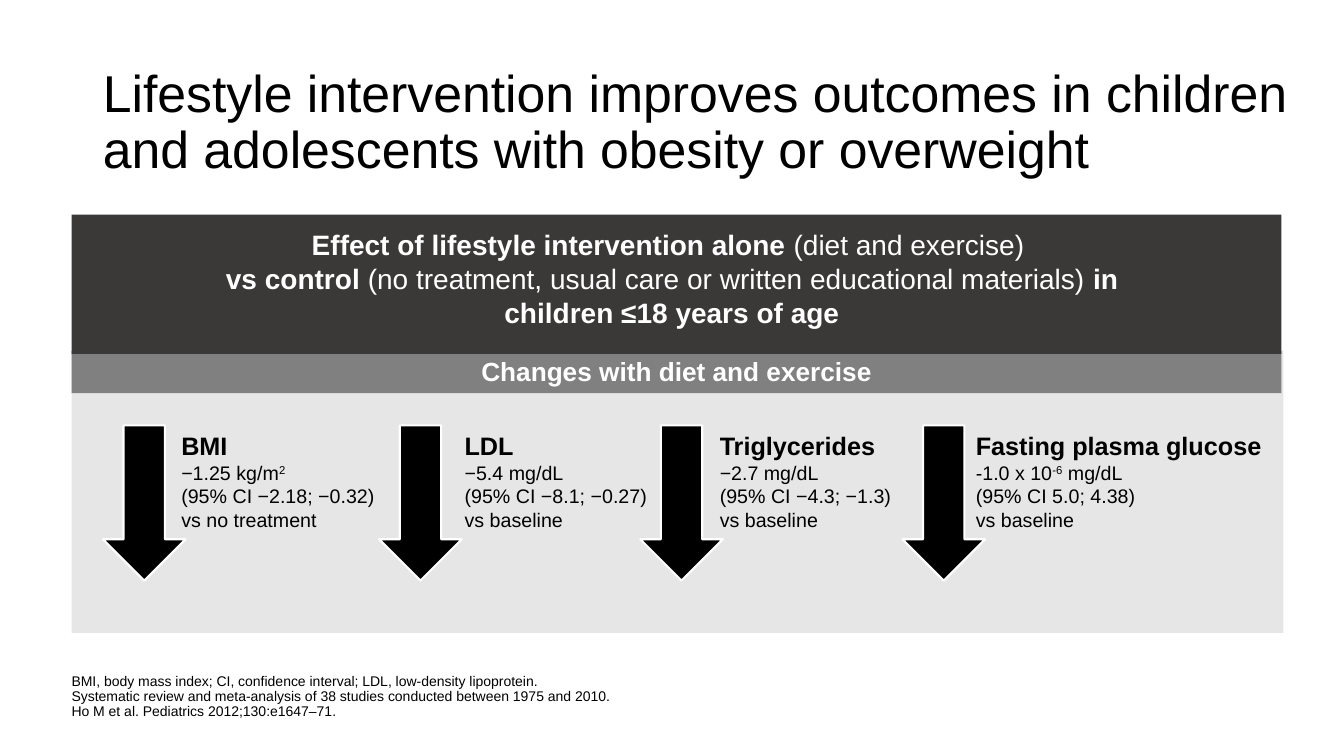
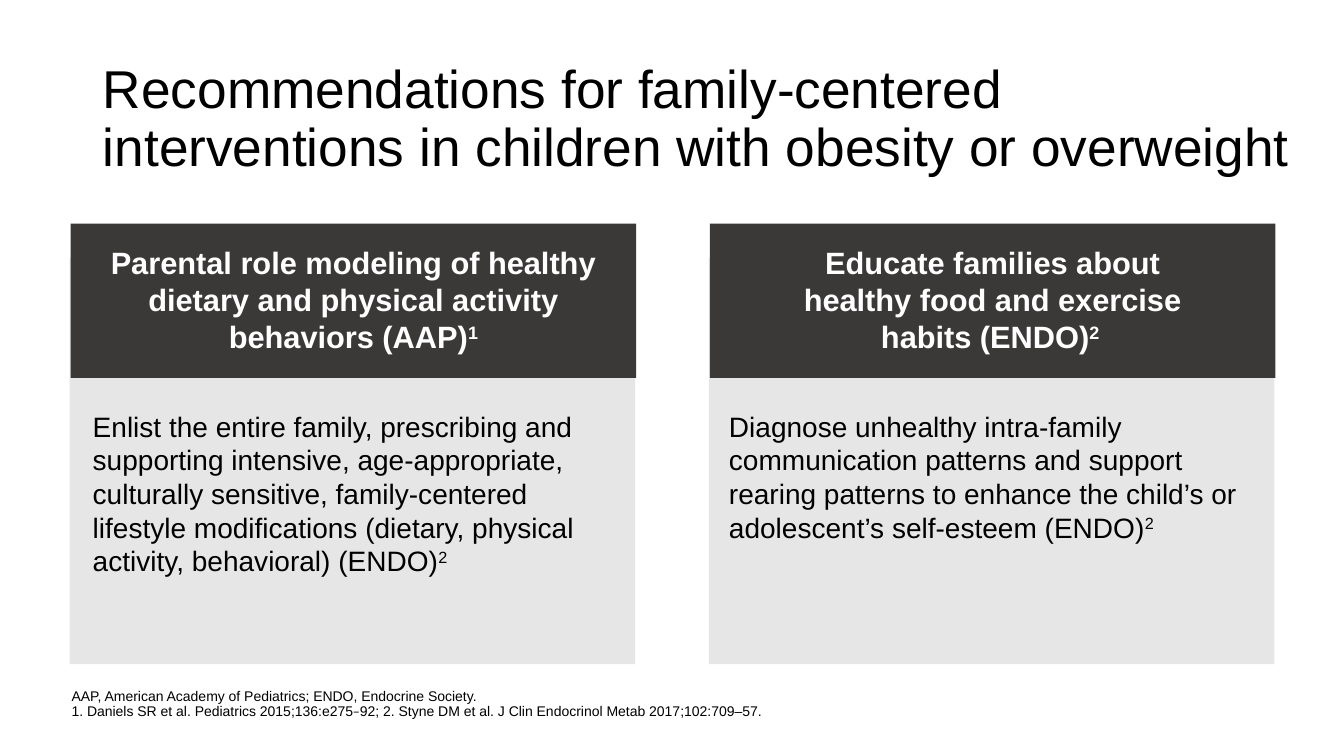
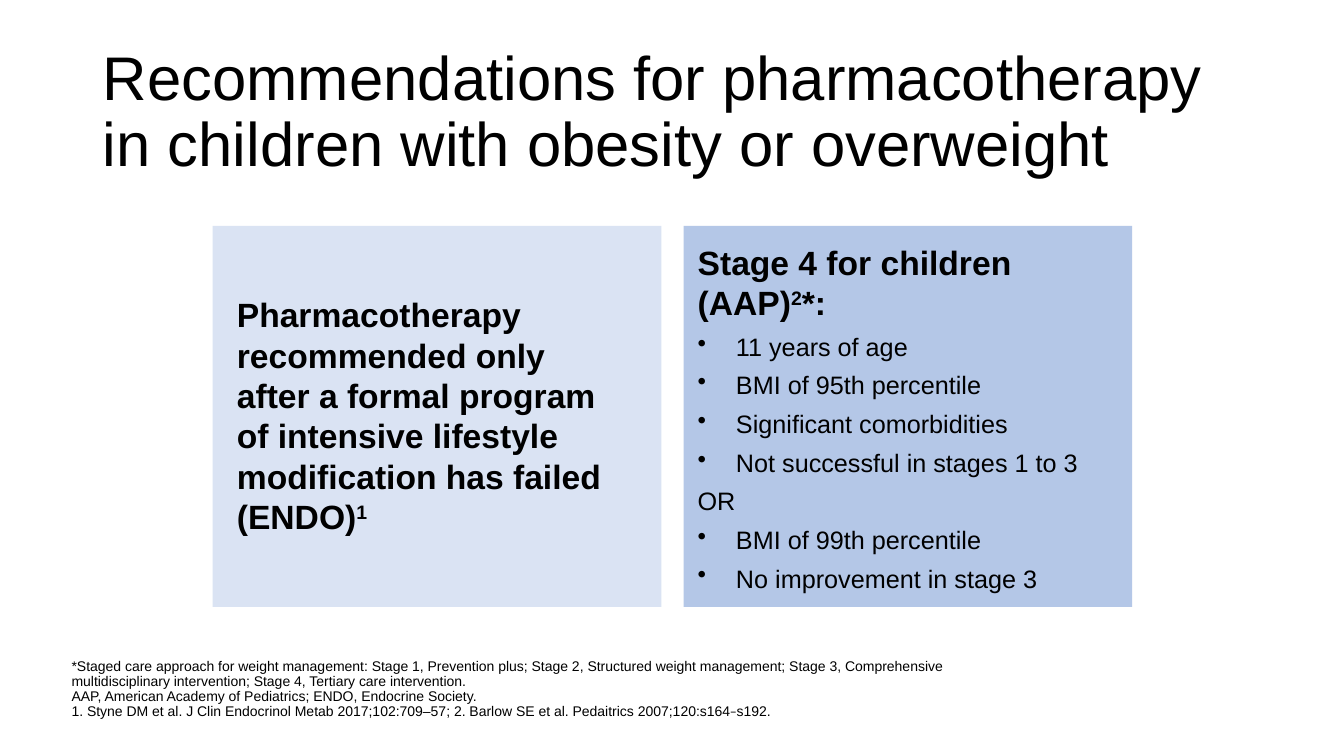
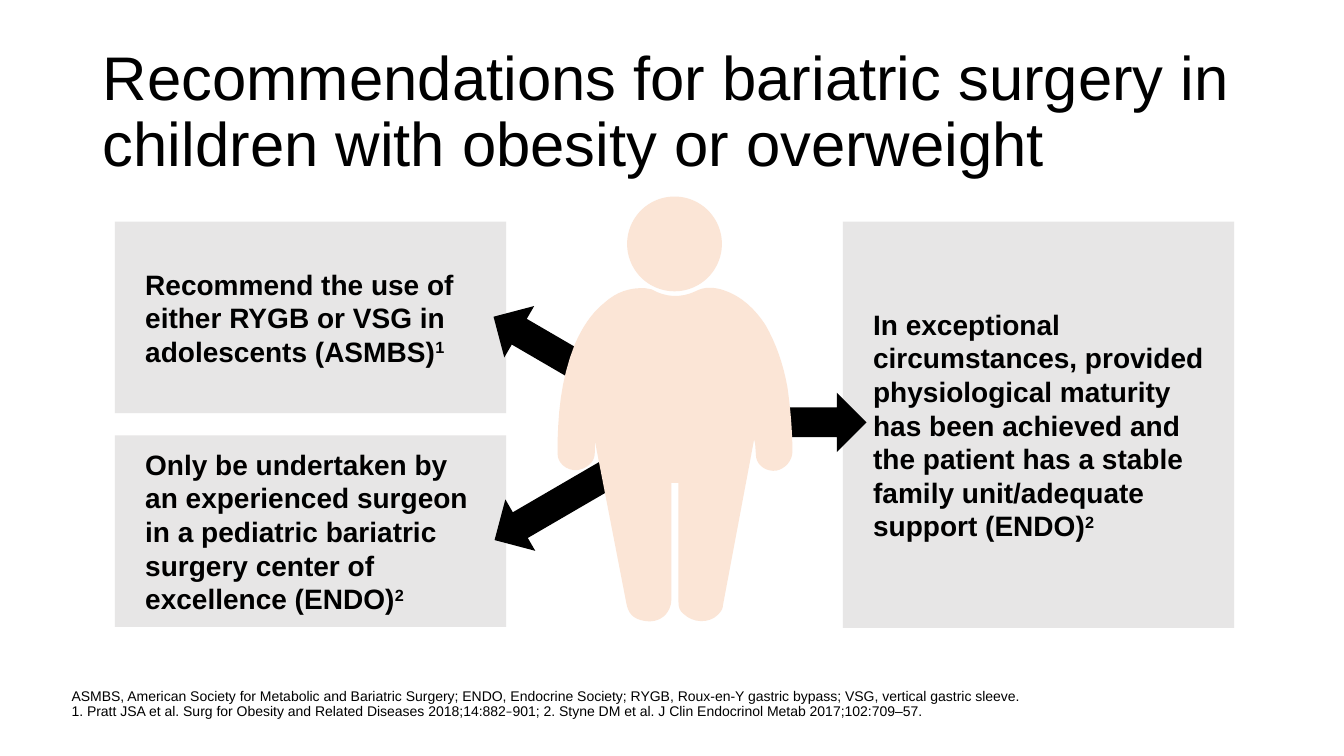
"""Build four slides on treating obesity in children."""
import pptx
import pptx.dml.color
import pptx.enum.shapes
import pptx.enum.text
import pptx.oxml.ns
import pptx.util
from lxml import etree

Inches = pptx.util.Inches
Pt = pptx.util.Pt
Kind = pptx.enum.shapes.MSO_SHAPE
Anchor = pptx.enum.text.MSO_ANCHOR
Align = pptx.enum.text.PP_ALIGN

BLACK, WHITE = "000000", "FFFFFF"
DARK, GREY, PALE = "3B3838", "808080", "E7E6E6"
ICE, BLUE, SKIN = "DAE3F3", "B4C7E7", "FBE5D6"
PAD = (0.1, 0.05, 0.1, 0.05)
NONE = (0, 0, 0, 0)
LAYOUT = {"alignment", "line_spacing", "space_before", "space_after"}
DASH = ("–", {"name": "Calibri"})
PLAIN = {"bold": False}


def shade(code):
    """Turn a hex string into a colour."""
    return pptx.dml.color.RGBColor.from_string(code)


def para(*runs, **style):
    """Pair the runs of a paragraph with its own style."""
    return runs, style


def up(text):
    """Make a raised run."""
    return text, {"raised": True}


def trace(start, parts):
    """Turn lines and cubic curves into a list of points."""
    spots = [start]
    for part in parts:
        if len(part) == 2:
            spots.append(part)
            continue
        x0, y0 = spots[-1]
        x1, y1, x2, y2, x3, y3 = part
        for step in range(1, 9):
            t = step / 8
            a, b, c, d = (1 - t) ** 3, 3 * t * (1 - t) ** 2, 3 * t * t * (1 - t), t ** 3
            spots.append((a * x0 + b * x1 + c * x2 + d * x3,
                          a * y0 + b * y1 + c * y2 + d * y3))
    return spots


class Deck:
    """Hold the style and the current slide."""

    def __init__(self):
        """Start an empty wide deck."""
        self.file = pptx.Presentation()
        self.file.slide_width = Inches(13.33)
        self.file.slide_height = Inches(7.5)
        self.slide = None

    def page(self, title, size, top, width, notes):
        """Add a slide with its title and footnotes."""
        self.slide = self.file.slides.add_slide(self.file.slide_layouts[5])
        head = self.slide.shapes.title
        box = {"left": 0.92, "top": top, "width": width, "height": 1.45}
        for name, value in box.items():
            setattr(head, name, Inches(value))
        self.put(head.text_frame, [para(title)], anchor=Anchor.MIDDLE,
                 size=size, line_spacing=0.9)
        self.text((0.71, 6.79, 9.46, 0.35), notes, anchor=Anchor.BOTTOM,
                  size=10, line_spacing=0.9)

    def put(self, frame, paras, pad=PAD, anchor=Anchor.TOP, **style):
        """Fill a text frame with paragraphs."""
        sides = ("left", "top", "right", "bottom")
        look = {"margin_" + side: Inches(gap) for side, gap in zip(sides, pad)}
        look.update(word_wrap=True, vertical_anchor=anchor,
                    auto_size=pptx.enum.text.MSO_AUTO_SIZE.NONE)
        for name, value in look.items():
            setattr(frame, name, value)
        base = {"name": "Arial", "color": BLACK, "alignment": Align.LEFT, **style}
        for spot, (runs, own) in enumerate(paras):
            line = frame.add_paragraph() if spot else frame.paragraphs[0]
            mix = {**base, **own}
            for name in LAYOUT & mix.keys():
                setattr(line, name, mix[name])
            if mix.get("bullet"):
                self.bullet(line)
            for run in runs:
                text, extra = (run, {}) if isinstance(run, str) else run
                self.run(line, text, {**mix, **extra})

    def run(self, line, text, style):
        """Add a run, with line breaks where the text has them."""
        for spot, piece in enumerate(text.split("\n")):
            if spot:
                line.add_line_break()
            run = line.add_run()
            run.text = piece
            font = {"name": style["name"], "size": Pt(style["size"]),
                    "bold": style.get("bold", False)}
            for name, value in font.items():
                setattr(run.font, name, value)
            run.font.color.rgb = shade(style["color"])
            if style.get("raised"):
                run._r.get_or_add_rPr().set("baseline", "30000")

    def bullet(self, line):
        """Give a paragraph a hanging bullet."""
        props = line._p.get_or_add_pPr()
        props.set("marL", str(Inches(0.38)))
        props.set("indent", str(-Inches(0.38)))
        mark = etree.SubElement(props, pptx.oxml.ns.qn("a:buChar"))
        mark.set("char", "•")

    def text(self, at, paras, pad=NONE, **style):
        """Add a text box."""
        box = self.slide.shapes.add_textbox(*map(Inches, at))
        self.put(box.text_frame, paras, pad, **style)

    def paint(self, shape, fill, edge=None):
        """Set the fill and outline of a shape."""
        shape.shadow.inherit = False
        shape.fill.solid()
        shape.fill.fore_color.rgb = shade(fill)
        if edge:
            shape.line.color.rgb = shade(edge)
            shape.line.width = Pt(1.5)
        else:
            shape.line.fill.background()

    def shape(self, at, fill, kind=Kind.RECTANGLE, edge=None, turn=0):
        """Add a preset shape."""
        item = self.slide.shapes.add_shape(kind, *map(Inches, at))
        item.rotation = turn
        self.paint(item, fill, edge)
        return item

    def panel(self, at, fill, paras, **style):
        """Add a rectangle that holds text."""
        self.put(self.shape(at, fill).text_frame, paras, **style)

    def free(self, spots, fill):
        """Add a closed outline."""
        spots = [(Inches(x), Inches(y)) for x, y in spots]
        form = self.slide.shapes.build_freeform(*spots[0])
        form.add_line_segments(spots[1:], close=True)
        self.paint(form.convert_to_shape(), fill)


def effects(deck):
    """Build the slide on lifestyle outcomes."""
    deck.page("Lifestyle intervention improves outcomes in children and adolescents "
              "with obesity or overweight", 37, 0.5, 12.25, [
                  para("BMI, body mass index; CI, confidence interval; "
                       "LDL, low-density lipoprotein."),
                  para("Systematic review and meta-analysis of 38 studies "
                       "conducted between 1975 and 2010."),
                  para("Ho M et al. Pediatrics 2012;130:e1647–71.")])
    deck.shape((0.71, 3.48, 12.02, 2.8), PALE)
    deck.panel((0.71, 3.48, 12, 0.42), GREY, [para("Changes with diet and exercise")],
               size=18.7, bold=True, color=WHITE, alignment=Align.CENTER)
    items = [
        (1.02, 1.7, 2.16, "BMI", ("−1.25 kg/m", up("2")),
         "(95% CI −2.18; −0.32)", "vs no treatment"),
        (3.76, 4.51, 2.11, "LDL", ("−5.4 mg/dL",), "(95% CI −8.1; −0.27)", "vs baseline"),
        (6.35, 7.04, 2.19, "Triglycerides", ("−2.7 mg/dL",),
         "(95% CI −4.3; −1.3)", "vs baseline"),
        (8.95, 9.58, 3.22, "Fasting plasma glucose", ("-1.0 x 10", up("-6"), " mg/dL"),
         "(95% CI 5.0; 4.38)", "vs baseline"),
    ]
    for x, left, width, name, drop, span, base in items:
        deck.shape((x, 4.22, 0.82, 1.54), BLACK, Kind.DOWN_ARROW, WHITE)
        deck.text((left, 4.22, width, 1.47),
                  [para(name, size=18, bold=True), para(*drop), para(span), para(base)],
                  pad=PAD, size=14)
    deck.shape((0.71, 2.13, 12, 1.38), DARK)
    deck.text((2.16, 2.26, 9.01, 1.09), [
        para("Effect of lifestyle intervention alone ", ("(diet and exercise) ", PLAIN)),
        para("vs control ",
             ("(no treatment, usual care or written educational materials) ", PLAIN),
             "in children ≤18 years of age")],
        size=20, bold=True, color=WHITE, alignment=Align.CENTER)


def family(deck):
    """Build the slide on family-centered care."""
    deck.page("Recommendations for family-centered interventions in children "
              "with obesity or overweight", 38, 0.47, 12.02, [
                  para("AAP, American Academy of Pediatrics; ENDO, Endocrine Society."),
                  para("1. Daniels SR et al. Pediatrics 2015;136:e275", DASH,
                       "92; 2. Styne DM et al. J Clin Endocrinol Metab 2017;102:709–57.")])
    cards = [
        (0.69, 0.92, 5.17,
         para("Parental role modeling of healthy dietary and physical activity "
              "behaviors (AAP)", up("1")),
         para("Enlist the entire family, prescribing and supporting intensive, "
              "age-appropriate, culturally sensitive, family-centered lifestyle "
              "modifications (dietary, physical activity, behavioral) (ENDO)", up("2"))),
        (7.03, 7.23, 5.21,
         para("Educate families about\nhealthy food and exercise\nhabits (ENDO)", up("2 ")),
         para("Diagnose unhealthy intra-family communication patterns and support "
              "rearing patterns to enhance the child’s or adolescent’s self-esteem "
              "(ENDO)", up("2"))),
    ]
    for x, left, width, head, body in cards:
        deck.shape((x, 2.56, 5.61, 4.03), PALE)
        deck.panel((x + 0.01, 2.22, 5.61, 1.53), DARK, [head], pad=(0.2, 0.2, 0.2, 0.05),
                   size=22, bold=True, color=WHITE, alignment=Align.CENTER)
        deck.text((left, 4.06, width, 1.68), [body], size=20)


def drugs(deck):
    """Build the slide on pharmacotherapy."""
    deck.page("Recommendations for pharmacotherapy in children with obesity or overweight",
              44, 0.4, 11.5, [
                  para("*Staged care approach for weight management: Stage 1, Prevention "
                       "plus; Stage 2, Structured weight management; Stage 3, Comprehensive "
                       "multidisciplinary intervention; Stage 4, Tertiary care intervention."),
                  para("AAP, American Academy of Pediatrics; ENDO, Endocrine Society."),
                  para("1. Styne DM et al. J Clin Endocrinol Metab 2017;102:709–57; "
                       "2. Barlow SE et al. Pedaitrics 2007;120:s164", DASH, "s192.")])
    for x, fill in ((2.11, ICE), (6.78, BLUE)):
        deck.shape((x, 2.24, 4.45, 3.78), fill)
    deck.text((2.35, 2.92, 3.7, 2.42), [
        para("Pharmacotherapy recommended only after a formal program of intensive "
             "lifestyle modification has failed (ENDO)", up("1"))], size=24, bold=True)
    rules = ["11 years of age", "BMI of 95th percentile", "Significant comorbidities",
             "Not successful in stages 1 to 3", "OR", "BMI of 99th percentile",
             "No improvement in stage 3"]
    head = para("Stage 4 for children (AAP)", up("2"), "*:", size=24, bold=True)
    deck.text((6.92, 2.4, 4.06, 3.52),
              [head] + [para(rule, bullet=rule != "OR") for rule in rules],
              size=18, space_after=Pt(6))


def surgery(deck):
    """Build the slide on bariatric surgery."""
    deck.page("Recommendations for bariatric surgery in children with obesity or overweight",
              44, 0.4, 11.5, [
                  para("ASMBS, American Society for Metabolic and Bariatric Surgery; ENDO, "
                       "Endocrine Society; RYGB, Roux-en-Y gastric bypass; VSG, vertical "
                       "gastric sleeve."),
                  para("1. Pratt JSA et al. Surg for Obesity and Related Diseases "
                       "2018;14:882", DASH,
                       "901; 2. Styne DM et al. J Clin Endocrinol Metab 2017;102:709–57.")])
    cards = [
        (8.36, 2.2, 4.03, "In exceptional circumstances, provided physiological maturity "
         "has been achieved and the patient has a stable family unit/adequate support "
         "(ENDO)", "2"),
        (1.14, 4.32, 1.9, "Only be undertaken by an experienced surgeon in a pediatric "
         "bariatric surgery center of excellence (ENDO)", "2"),
        (1.14, 2.2, 1.9, "Recommend the use of either RYGB or VSG in adolescents (ASMBS)",
         "1"),
    ]
    for x, y, height, text, mark in cards:
        deck.panel((x, y, 3.88, height), PALE, [para(text, up(mark))],
                   pad=(0.3, 0.05, 0.2, 0.05), anchor=Anchor.MIDDLE, size=20, bold=True)
    for x, y, turn in ((5.49, 2.63, 120.2), (7.27, 3.16, 270), (5.5, 3.81, 59.8)):
        deck.shape((x, y, 0.59, 2.06), BLACK, Kind.DOWN_ARROW, turn=turn)
    body = [
        (6.66, 4.79), (6.66, 5.94),
        (6.66, 6.09, 6.54, 6.19, 6.39, 6.16), (6.28, 6.14, 6.23, 6.09, 6.21, 5.97),
        (5.9, 4.37), (5.9, 4.49),
        (5.9, 4.57, 5.85, 4.62, 5.78, 4.65), (5.67, 4.7, 5.53, 4.62, 5.53, 4.5),
        (5.53, 4.13, 5.56, 3.77, 5.7, 3.42), (5.77, 3.26, 5.86, 3.11, 6, 3),
        (6.11, 2.9, 6.25, 2.85, 6.4, 2.86), (6.46, 2.87),
        (6.6, 2.95, 6.75, 2.96, 6.9, 2.89), (6.99, 2.84, 7.09, 2.85, 7.18, 2.88),
        (7.36, 2.94, 7.49, 3.07, 7.59, 3.22), (7.7, 3.41, 7.77, 3.62, 7.81, 3.84),
        (7.84, 4.05, 7.86, 4.27, 7.86, 4.48), (7.86, 4.57, 7.79, 4.65, 7.7, 4.67),
        (7.61, 4.68, 7.52, 4.63, 7.5, 4.54), (7.49, 4.4), (7.48, 4.36), (7.17, 6.01),
        (7.17, 6.04, 7.15, 6.07, 7.12, 6.1), (7.03, 6.19, 6.87, 6.18, 6.78, 6.09),
        (6.74, 6.06, 6.73, 6.02, 6.73, 5.97),
    ]
    deck.free(trace((6.73, 4.79), body), SKIN)
    deck.shape((6.22, 1.95, 0.94, 0.94), SKIN, Kind.OVAL)


def main():
    """Build and save the deck."""
    deck = Deck()
    for build in (effects, family, drugs, surgery):
        build(deck)
    deck.file.save("out.pptx")


if __name__ == "__main__":
    main()
